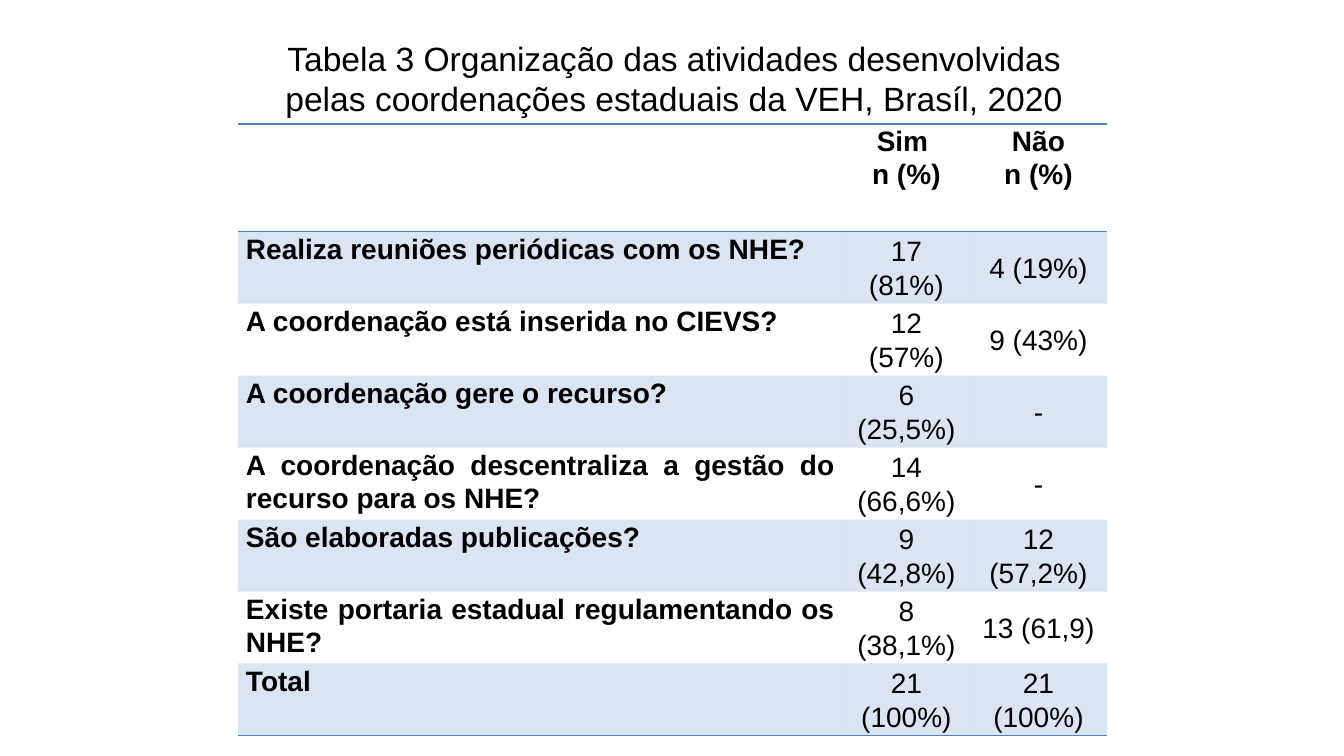
from dataclasses import dataclass

from lxml.etree import SubElement
from pptx import Presentation
from pptx.dml.color import RGBColor
from pptx.enum.text import MSO_ANCHOR, MSO_AUTO_SIZE, PP_ALIGN
from pptx.oxml import parse_xml
from pptx.oxml.ns import nsdecls, qn
from pptx.util import Inches, Pt


@dataclass(frozen=True)
class Theme:
    font: str = "Arial"
    ink: str = "000000"
    accent: str = "4F81BD"
    band_opacity: int = 20
    title_size: int = 24
    table_size: int = 20
    rule_width: int = 1
    line_spacing: float = 1.07


GRID = 0.1  # inches per grid column and grid row
NO_STYLE = "{2D5ABB26-0587-4C30-8999-92F81FD0307C}"

TITLE = ("Tabela 3 Organização das atividades desenvolvidas "
         "pelas coordenações estaduais da VEH, Brasíl, 2020")
HEADER = ("", "Sim \nn (%)", "Não\nn (%)")
ANSWERS = [
    ("Realiza reuniões periódicas com os NHE?", "17 (81%)", "4 (19%)"),
    ("A coordenação está inserida no CIEVS?", "12 (57%)", "9 (43%)"),
    ("A coordenação gere o recurso?", "6 (25,5%)", "-"),
    ("A coordenação descentraliza a gestão do recurso para os NHE?",
     "14 (66,6%)", "-"),
    ("São elaboradas publicações?", "9 (42,8%)", "12 (57,2%)"),
    ("Existe portaria estadual regulamentando os NHE?",
     "8 (38,1%)", "13 (61,9)"),
    ("Total", "21 (100%)", "21 (100%)"),
]


def units(n):
    return Inches(n * GRID)


def write(tf, text, *, font, size, color, bold=False,
          align=PP_ALIGN.CENTER, spacing=None):
    """Put each line of text in its own formatted paragraph."""
    for i, line in enumerate(text.split("\n")):
        p = tf.paragraphs[0] if i == 0 else tf.add_paragraph()
        p.alignment = align
        p.line_spacing = spacing
        p.font.size = Pt(size)
        if line:
            r = p.add_run()
            r.text = line
            r.font.name = font
            r.font.size = Pt(size)
            r.font.bold = bold
            r.font.color.rgb = RGBColor.from_string(color)


class SlideBuilder:
    def __init__(self, slide, theme):
        self.slide = slide
        self.theme = theme

    def title(self, text, x, y, w, h):
        t = self.theme
        sp = self.slide.shapes.add_textbox(*map(units, (x, y, w, h)))
        tf = sp.text_frame
        tf.word_wrap = True
        tf.auto_size = MSO_AUTO_SIZE.SHAPE_TO_FIT_TEXT
        tf.vertical_anchor = MSO_ANCHOR.MIDDLE
        write(tf, text, font=t.font, size=t.title_size, color=t.ink)

    def table(self, rows, x, y, widths, heights):
        sp = self.slide.shapes.add_table(
            len(rows), len(widths),
            *map(units, (x, y, sum(widths), sum(heights))))
        table = sp.table
        table.first_row = table.horz_banding = False
        table._tbl.tblPr.find(qn("a:tableStyleId")).text = NO_STYLE
        for column, width in zip(table.columns, widths):
            column.width = units(width)
        for row, height in zip(table.rows, heights):
            row.height = units(height)
        for i, values in enumerate(rows):
            sides = {0: ("T", "B"), len(rows) - 1: ("B",)}.get(i, ())
            for j, value in enumerate(values):
                cell = table.cell(i, j)
                self.cell(cell, value, header=i == 0, label=j == 0)
                self.band(cell, shaded=i % 2 == 1)
                self.rules(cell, sides)

    def cell(self, cell, text, header, label):
        t = self.theme
        cell.margin_left = cell.margin_right = Inches(0.08)
        cell.margin_top = cell.margin_bottom = 0
        top = header or label
        cell.vertical_anchor = MSO_ANCHOR.TOP if top else MSO_ANCHOR.MIDDLE
        align = PP_ALIGN.JUSTIFY if label else PP_ALIGN.CENTER
        write(cell.text_frame, text, font=t.font, size=t.table_size,
              color=t.ink, bold=top, align=align, spacing=t.line_spacing)

    def band(self, cell, shaded):
        if not shaded:
            cell.fill.background()
            return
        cell.fill.solid()
        cell.fill.fore_color.rgb = RGBColor.from_string(self.theme.accent)
        color = cell._tc.tcPr.find(".//" + qn("a:srgbClr"))
        SubElement(color, qn("a:alpha"),
                   val=str(self.theme.band_opacity * 1000))

    def rules(self, cell, sides):
        """Draw the named borders; they come before the fill in the XML."""
        t = self.theme
        for i, side in enumerate(sides):
            cell._tc.tcPr.insert(i, parse_xml(
                f'<a:ln{side} {nsdecls("a")} w="{Pt(t.rule_width)}">'
                f'<a:solidFill><a:srgbClr val="{t.accent}"/></a:solidFill>'
                f'</a:ln{side}>'))


def main():
    prs = Presentation()
    prs.slide_width, prs.slide_height = Inches(13.33), Inches(7.5)
    s = SlideBuilder(prs.slides.add_slide(prs.slide_layouts[6]), Theme())
    s.table([HEADER, *ANSWERS], 23.6, 12.3, widths=(60, 12.6, 13.6),
            heights=[10.7] + [7.14] * len(ANSWERS))
    s.title(TITLE, 25, 3.2, 83.7, 9.1)
    prs.save("out.pptx")


if __name__ == "__main__":
    main()
